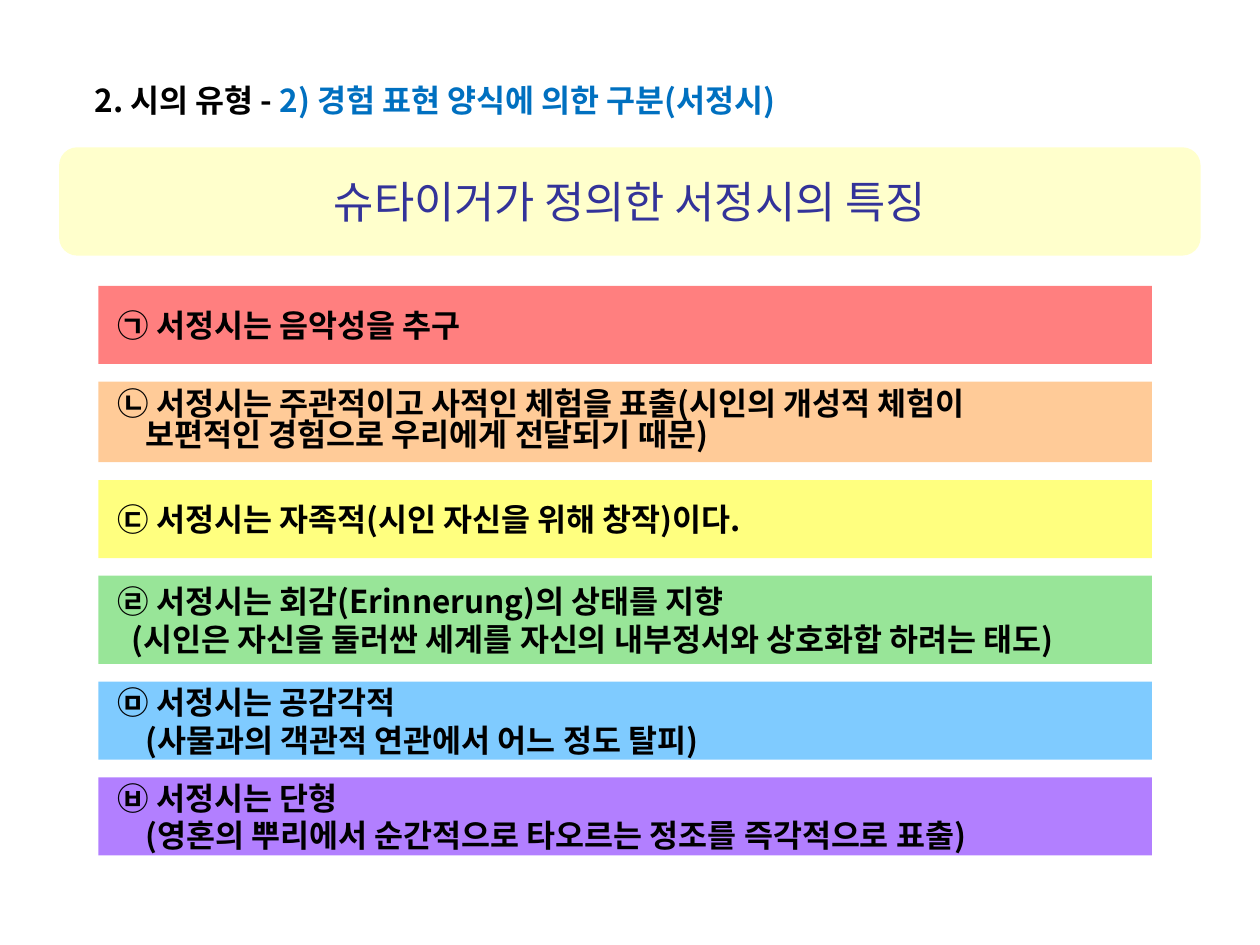
from lxml import etree
from pptx import Presentation
from pptx import util as u
from pptx.dml.color import RGBColor
from pptx.enum import shapes, text
from pptx.oxml.ns import qn

SPACE = 4  # width of one space at 18 pt
BAR_LEFT, BAR_TOP, BAR_WIDTH, BAR_GAP = 56.2, 163.4, 602, 10.1

# colour, height, line spacing, lines as (indent in spaces, wording)
BARS = [
    ("FF0000", 44.6, None, [(1, "㉠ 서정시는 음악성을 추구")]),
    ("FF9933", 46.1, 0.8, [
        (1, "㉡ 서정시는 주관적이고 사적인 체험을 표출(시인의 개성적 체험이"),
        (5, "보편적인 경험으로 우리에게 전달되기 때문)")]),
    ("FFFF00", 44.6, None, [(1, "㉢ 서정시는 자족적(시인 자신을 위해 창작)이다.")]),
    ("33CC33", 50.4, None, [
        (1, "㉣ 서정시는 회감(Erinnerung)의 상태를 지향"),
        (3, "(시인은 자신을 둘러싼 세계를 자신의 내부정서와 상호화합 하려는 태도)")]),
    ("0099FF", 44.6, None, [
        (1, "㉤ 서정시는 공감각적"),
        (5, "(사물과의 객관적 연관에서 어느 정도 탈피)")]),
    ("6600FF", 44.6, None, [
        (1, "㉥ 서정시는 단형"),
        (5, "(영혼의 뿌리에서 순간적으로 타오르는 정조를 즉각적으로 표출)")]),
]


def rgb(value):
    return RGBColor.from_string(value)


class SlideBuilder:
    font = "Noto Sans CJK KR"
    ink = "000000"

    def __init__(self, slide):
        self.slide = slide

    def run(self, p, wording, size=18, color=ink, bold=True):
        r = p.add_run()
        r.text = wording
        r.font.size = u.Pt(size)
        r.font.bold = bold
        r.font.color.rgb = rgb(color)
        r.font.name = self.font
        east_asian = etree.SubElement(r.font._element, qn("a:ea"))
        east_asian.set("typeface", self.font)

    def title(self, box, runs):
        sp = self.slide.shapes.title
        sp.left, sp.top, sp.width, sp.height = map(u.Pt, box)
        tf = sp.text_frame
        tf.auto_size = text.MSO_AUTO_SIZE.NONE
        tf.vertical_anchor = text.MSO_ANCHOR.TOP
        p = tf.paragraphs[0]
        p.alignment = text.PP_ALIGN.LEFT
        for wording, color in runs:
            self.run(p, wording, color=color)

    def panel(self, kind, box, color, opacity=100):
        """Add a borderless filled shape and return its text frame."""
        sp = self.slide.shapes.add_shape(kind, *map(u.Pt, box))
        sp.shadow.inherit = False
        sp.line.fill.background()
        sp.fill.solid()
        sp.fill.fore_color.rgb = rgb(color)
        if opacity < 100:
            clr = sp.fill._xPr.find(".//" + qn("a:srgbClr"))
            etree.SubElement(clr, qn("a:alpha")).set("val", str(opacity * 1000))
        tf = sp.text_frame
        tf.word_wrap = True
        tf.vertical_anchor = text.MSO_ANCHOR.MIDDLE
        return tf

    def banner(self, box, wording):
        tf = self.panel(shapes.MSO_SHAPE.ROUNDED_RECTANGLE, box, "FFFFCC")
        p = tf.paragraphs[0]
        p.alignment = text.PP_ALIGN.CENTER
        self.run(p, wording, size=25, color="333399", bold=False)

    def bar(self, box, color, spacing, lines):
        tf = self.panel(shapes.MSO_SHAPE.RECTANGLE, box, color, opacity=50)
        for i, (indent, wording) in enumerate(lines):
            p = tf.add_paragraph() if i else tf.paragraphs[0]
            p.alignment = text.PP_ALIGN.LEFT
            p.line_spacing = spacing
            p._p.get_or_add_pPr().set("marL", str(u.Pt(indent * SPACE)))
            self.run(p, wording)


def main():
    prs = Presentation()
    prs.slide_width, prs.slide_height = u.Pt(720), u.Pt(540)
    title_only = prs.slide_layouts[5]
    s = SlideBuilder(prs.slides.add_slide(title_only))

    s.title((46.8, 42.5, 465, 28.8), [
        ("2. 시의 유형 - ", "000000"),
        ("2) 경험 표현 양식에 의한 구분(서정시)", "0070C0")])
    s.banner((33.8, 84.2, 652.3, 61.9), "슈타이거가 정의한 서정시의 특징")

    top = BAR_TOP
    for color, height, spacing, lines in BARS:
        s.bar((BAR_LEFT, top, BAR_WIDTH, height), color, spacing, lines)
        top += height + BAR_GAP

    prs.save("out.pptx")


if __name__ == "__main__":
    main()
